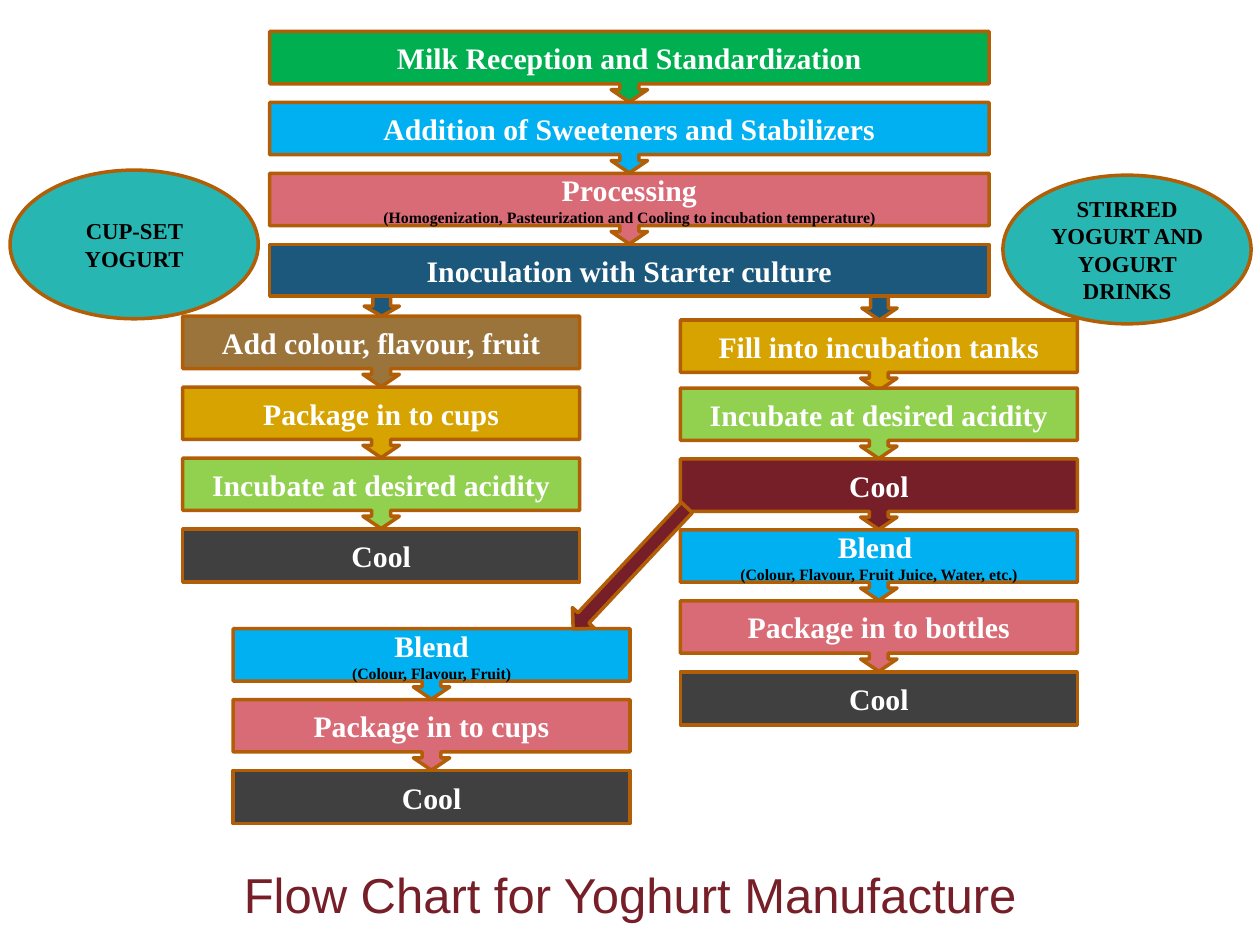
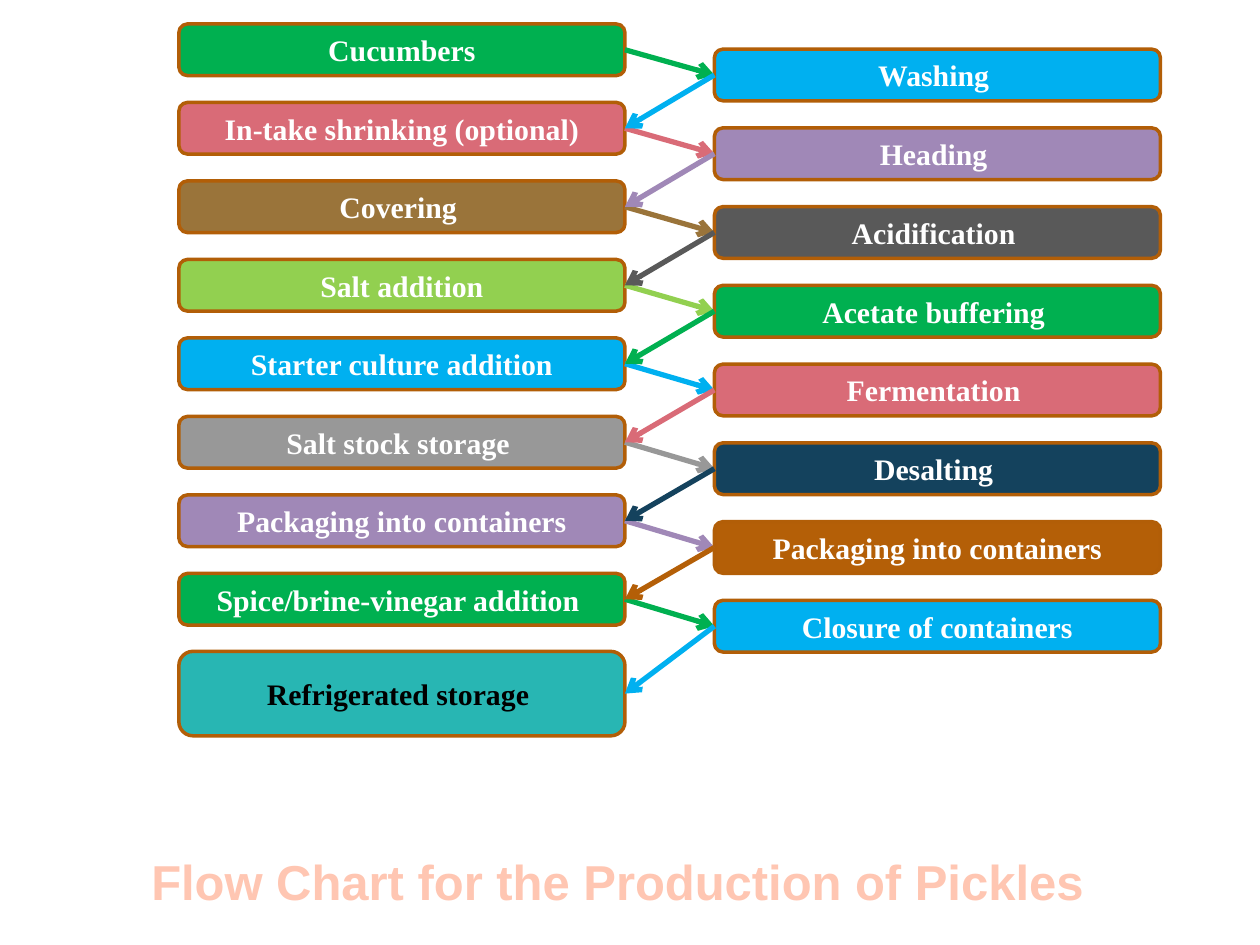
from dataclasses import dataclass
from itertools import chain, pairwise, zip_longest

from lxml.etree import SubElement
from pptx import Presentation
from pptx.dml.color import RGBColor
from pptx.enum.shapes import MSO_CONNECTOR, MSO_SHAPE
from pptx.enum.text import MSO_ANCHOR, PP_ALIGN
from pptx.oxml.ns import qn
from pptx.util import Inches, Pt


@dataclass(frozen=True)
class Theme:
    green: str = "00B050"
    sky: str = "00B0F0"
    rose: str = "D96B77"
    gold: str = "D6A300"
    lime: str = "92D050"
    brown: str = "9A743A"
    wine: str = "771F28"
    navy: str = "1B587C"
    deep_navy: str = "14425D"
    lilac: str = "A088B7"
    orange: str = "B45F07"
    teal: str = "28B6B3"
    charcoal: str = "404040"
    slate: str = "595959"
    grey: str = "989898"
    outline: str = "B25E07"
    peach: str = "FFC6B2"
    white: str = "FFFFFF"
    black: str = "000000"
    body_font: str = "Times New Roman"
    title_font: str = "Arial"
    step_size: int = 17
    note_size: int = 9
    product_size: int = 13
    title_size: int = 28
    outline_width: int = 2
    link_width: int = 3


T = Theme()
BOX_HEIGHT = 0.41
CALLOUT_HEIGHT = 0.56
LAST_HEIGHT = 0.42
PITCH = 0.563
CALLOUT_ADJ = (0.267, 0.258, 0.175, 0.742)
PLAIN_ADJ = (0, 0, 0, 1)
FRAME = {
    "margin_left": Inches(0.02), "margin_right": Inches(0.02),
    "margin_top": Inches(0.01), "margin_bottom": Inches(0.01),
    "word_wrap": True,
}


def set_values(obj, values):
    for name, value in values.items():
        setattr(obj, name, value)


def write(tf, lines, anchor=MSO_ANCHOR.MIDDLE):
    """Fill a frame with centred lines of (text, size, colour, bold, font)."""
    set_values(tf, FRAME | {"vertical_anchor": anchor})
    for i, (text, size, color, bold, font) in enumerate(lines):
        p = tf.paragraphs[0] if i == 0 else tf.add_paragraph()
        p.alignment = PP_ALIGN.CENTER
        r = p.add_run()
        r.text = text
        set_values(r.font, {"size": Pt(size), "bold": bold, "name": font})
        r.font.color.rgb = RGBColor.from_string(color)


def body_line(text, size=T.step_size, color=T.white):
    return text, size, color, True, T.body_font


def add_box(shapes, kind, at, fill, lines=(), adj=()):
    sp = shapes.add_shape(kind, *map(Inches, at))
    sp.shadow.inherit = False
    sp.fill.solid()
    sp.fill.fore_color.rgb = RGBColor.from_string(fill)
    sp.line.color.rgb = RGBColor.from_string(T.outline)
    sp.line.width = Pt(T.outline_width)
    for i, value in enumerate(adj):
        sp.adjustments[i] = value
    if lines:
        write(sp.text_frame, lines)
    return sp


def add_title(s, text, at, color, bold):
    tf = s.shapes.add_textbox(*map(Inches, at)).text_frame
    write(tf, [(text, T.title_size, color, bold, T.title_font)], MSO_ANCHOR.TOP)


def add_callout(s, left, top, width, step, last=False):
    """Draw one step of (text, fill, optional note); the last has no arrow."""
    text, fill, *notes = step
    lines = [body_line(text)]
    lines += [body_line(note, T.note_size, T.black) for note in notes]
    height, adj = (LAST_HEIGHT, PLAIN_ADJ) if last else (CALLOUT_HEIGHT, CALLOUT_ADJ)
    add_box(s.shapes, MSO_SHAPE.DOWN_ARROW_CALLOUT, (left, top, width, height),
            fill, lines, adj)


def add_flow(s, left, top, width, steps, ends=True):
    for i, step in enumerate(steps):
        add_callout(s, left, top + i * PITCH, width, step,
                    last=ends and i == len(steps) - 1)


def add_link(s, start, end, start_site, end_site, color):
    c = s.shapes.add_connector(MSO_CONNECTOR.STRAIGHT, 0, 0, 0, 0)
    c.begin_connect(start, start_site)
    c.end_connect(end, end_site)
    c.line.color.rgb = RGBColor.from_string(color)
    c.line.width = Pt(T.link_width)
    spPr = c.element.spPr
    SubElement(spPr.find(qn("a:ln")), qn("a:tailEnd"), type="arrow")
    SubElement(spPr, qn("a:effectLst"))


def add_inoculation(s):
    """The shared step that forks into the two product lines."""
    group = s.shapes.add_group_shape()
    add_box(group.shapes, MSO_SHAPE.RECTANGLE, (2.14, 1.94, 5.71, BOX_HEIGHT),
            T.navy, [body_line("Inoculation with Starter culture")])
    for left, height in ((2.89, 0.16), (6.84, 0.19)):
        add_box(group.shapes, MSO_SHAPE.DOWN_ARROW, (left, 2.35, 0.28, height), T.navy)


def yoghurt_slide(s):
    for text, left, top in (("CUP-SET YOGURT", 0.08, 1.35),
                            ("STIRRED YOGURT AND YOGURT DRINKS", 7.96, 1.39)):
        add_box(s.shapes, MSO_SHAPE.OVAL, (left, top, 1.97, 1.18), T.teal,
                [body_line(text, T.product_size, T.black)])

    incubate = ("Incubate at desired acidity", T.lime)
    cool = ("Cool", T.charcoal)
    add_flow(s, 2.14, 0.25, 5.71, [
        ("Milk Reception and Standardization", T.green),
        ("Addition of Sweeteners and Stabilizers", T.sky),
        ("Processing", T.rose,
         "(Homogenization, Pasteurization and Cooling to incubation temperature)"),
    ], ends=False)
    add_inoculation(s)
    add_flow(s, 1.45, 2.51, 3.15, [
        ("Add colour, flavour, fruit", T.brown),
        ("Package in to cups", T.gold),
        incubate,
        cool,
    ])
    add_callout(s, 5.4, 2.54, 3.15, ("Fill into incubation tanks", T.gold))
    add_flow(s, 5.4, 3.08, 3.15, [
        incubate,
        ("Cool", T.wine),
        ("Blend ", T.sky, "(Colour, Flavour, Fruit Juice, Water, etc.)"),
        ("Package in to bottles", T.rose),
        cool,
    ])
    add_flow(s, 1.85, 4.99, 3.15, [
        ("Blend", T.sky, "(Colour, Flavour, Fruit)"),
        ("Package in to cups", T.rose),
        cool,
    ])
    to_blend = add_box(s.shapes, MSO_SHAPE.DOWN_ARROW, (4.88, 3.85, 0.24, 1.32), T.wine)
    to_blend.rotation = 43.1
    add_title(s, "Flow Chart for Yoghurt Manufacture", (0.14, 6.85, 9.72, 0.49),
              T.wine, False)


def add_column(s, left, top, pitch, steps):
    return [add_box(s.shapes, MSO_SHAPE.ROUNDED_RECTANGLE,
                    (left, top + i * pitch, 3.54, BOX_HEIGHT), fill, [body_line(text)])
            for i, (text, fill) in enumerate(steps)]


def pickles_slide(s):
    left_steps = [
        ("Cucumbers", T.green),
        ("In-take shrinking (optional)", T.rose),
        ("Covering ", T.brown),
        ("Salt addition", T.lime),
        ("Starter culture addition", T.sky),
        ("Salt stock storage ", T.grey),
        ("Packaging into containers", T.lilac),
        ("Spice/brine-vinegar addition ", T.green),
    ]
    right_steps = [
        ("Washing ", T.sky),
        ("Heading ", T.lilac),
        ("Acidification ", T.slate),
        ("Acetate buffering ", T.green),
        ("Fermentation ", T.rose),
        ("Desalting ", T.deep_navy),
        ("Packaging into containers", T.orange),
        ("Closure of containers", T.sky),
    ]
    left = add_column(s, 1.42, 0.19, 0.623, left_steps)
    right = add_column(s, 5.67, 0.39, 0.625, right_steps)
    left.append(add_box(s.shapes, MSO_SHAPE.ROUNDED_RECTANGLE, (1.42, 5.17, 3.54, 0.67),
                        T.teal, [body_line("Refrigerated storage ", color=T.black)]))

    route = [sp for sp in chain.from_iterable(zip_longest(left, right)) if sp is not None]
    links = list(pairwise(route))
    left_site, right_site = 1, 3
    for pairs, sites in ((links[::2], (right_site, left_site)),
                         (links[1::2], (left_site, right_site))):
        for start, end in pairs:
            add_link(s, start, end, *sites, str(start.fill.fore_color.rgb))
    add_title(s, "Flow Chart for the Production of Pickles ", (0.21, 6.75, 9.49, 0.49),
              T.peach, True)


def main():
    prs = Presentation()
    set_values(prs, {"slide_width": Inches(10), "slide_height": Inches(7.5)})
    blank = prs.slide_layouts[6]
    for build in (yoghurt_slide, pickles_slide):
        build(prs.slides.add_slide(blank))
    prs.save("out.pptx")


if __name__ == "__main__":
    main()
